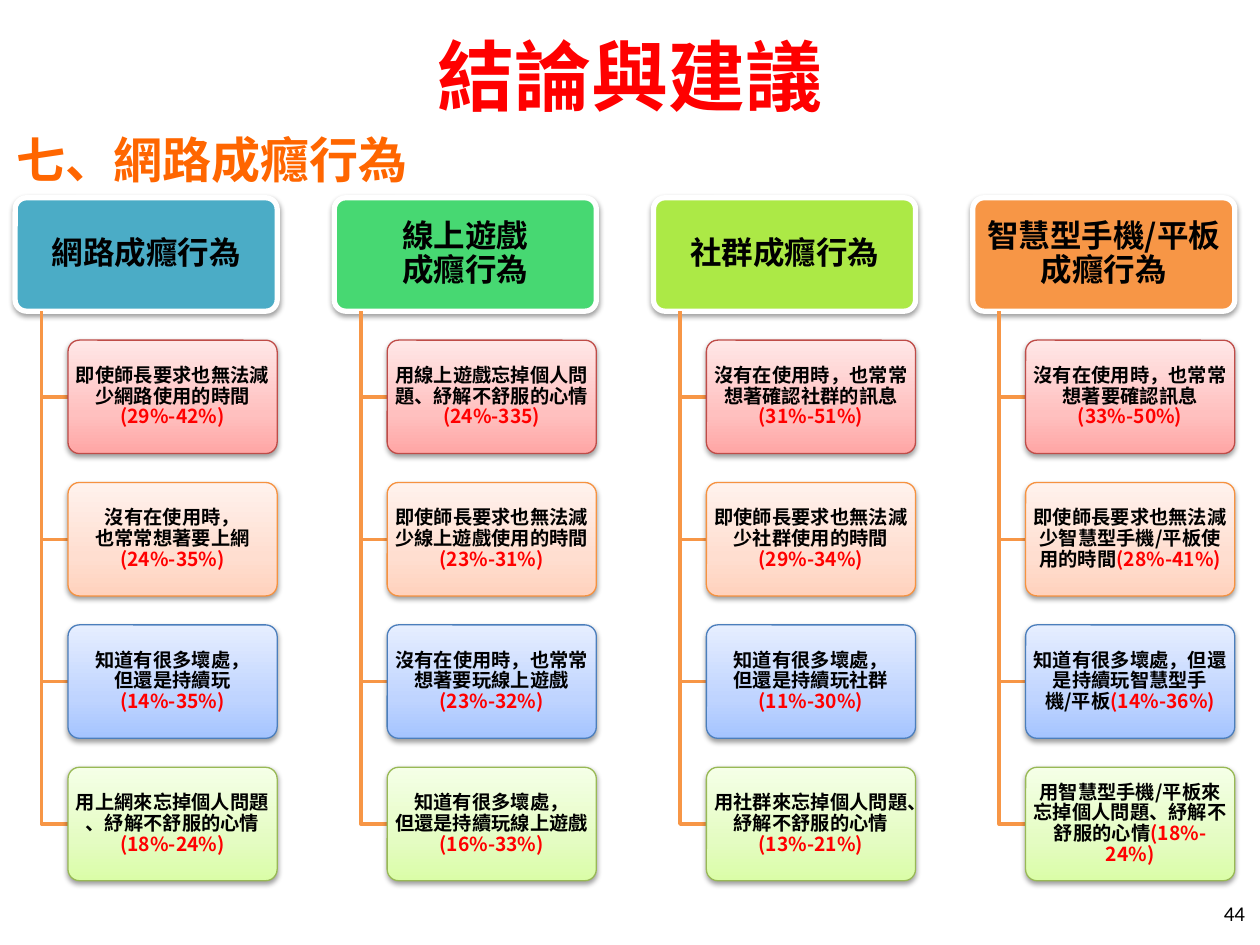
from copy import deepcopy

from lxml.etree import SubElement
from pptx import Presentation
from pptx.dml.color import RGBColor
from pptx.enum.shapes import MSO_SHAPE
from pptx.enum.text import MSO_ANCHOR, PP_ALIGN
from pptx.oxml.ns import qn
from pptx.util import Inches, Pt

FONT = "Noto Sans CJK SC"
COLORS = {
    "title": "FF0000", "section": "FF6600", "text": "000000",
    "share": "FF0000", "branch": "F79646", "header_line": "FFFFFF",
}
# Per row: outline, then gradient stops from bottom to top
ROW_STYLES = [
    ("BF4C48", ("FFA6A5", "FFC0BF", "FFE7E7")),
    ("F69240", ("FFD2BD", "FFDED0", "FFF2ED")),
    ("4B7EBC", ("A4C4FF", "BFD4FF", "E6EEFF")),
    ("98B955", ("DAFDA7", "E4FCC2", "F5FFE7")),
]
STOP_POSITIONS = (0, 35, 100)

# Per column: heading, fill, then (behaviour, share of students)
COLUMNS = [
    ("網路成癮行為", "4BACC6", [
        ("即使師長要求也無法減少網路使用的時間\n", "(29%-42%)"),
        ("沒有在使用時，\n也常常想著要上網\n", "(24%-35%)"),
        ("知道有很多壞處，\n但還是持續玩\n", "(14%-35%)"),
        ("用上網來忘掉個人問題\n、紓解不舒服的心情\n", "(18%-24%)"),
    ]),
    ("線上遊戲\n成癮行為", "47D872", [
        ("用線上遊戲忘掉個人問題、紓解不舒服的心情\n", "(24%-335)"),
        ("即使師長要求也無法減少線上遊戲使用的時間\n", "(23%-31%)"),
        ("沒有在使用時，也常常想著要玩線上遊戲\n", "(23%-32%)"),
        ("知道有很多壞處，\n但還是持續玩線上遊戲\n", "(16%-33%)"),
    ]),
    ("社群成癮行為", "ACE946", [
        ("沒有在使用時，也常常想著確認社群的訊息\n", "(31%-51%)"),
        ("即使師長要求也無法減少社群使用的時間\n", "(29%-34%)"),
        ("知道有很多壞處，\n但還是持續玩社群\n", "(11%-30%)"),
        ("用社群來忘掉個人問題、紓解不舒服的心情\n", "(13%-21%)"),
    ]),
    ("智慧型手機/平板成癮行為", "F79646", [
        ("沒有在使用時，也常常想著要確認訊息\n", "(33%-50%)"),
        ("即使師長要求也無法減少智慧型手機/平板使用的時間", "(28%-41%)"),
        ("知道有很多壞處，但還是持續玩智慧型手機/平板", "(14%-36%)"),
        ("用智慧型手機/平板來忘掉個人問題、紓解不舒服的心情", "(18%-24%)"),
    ]),
]

FIRST_LEFT, LAST_LEFT, HEADER_TOP = 0.12, 7.72, 1.57
COLUMN_STEP = (LAST_LEFT - FIRST_LEFT) / (len(COLUMNS) - 1)
ROW_STEP = 1.13
HEADER_WIDTH, BOX_WIDTH, BOX_HEIGHT = 2.08, 1.66, 0.9
TRUNK_INDENT, BOX_INDENT = 0.21, 0.42


def rgb(color):
    return RGBColor.from_string(color)


def format_run(run, size, color, bold=True, font=FONT):
    run.font.size = Pt(size)
    run.font.bold = bold
    run.font.color.rgb = rgb(color)
    run.font.name = font
    SubElement(run._r.get_or_add_rPr(), qn("a:ea"), typeface=font)


def match_line_breaks(paragraph):
    """Give line breaks the format of the first run, so line heights agree."""
    for line_break in paragraph._p.findall(qn("a:br")):
        line_break.insert(0, deepcopy(paragraph.runs[0]._r.rPr))


def add_text(slide, text, position, size, color, align=PP_ALIGN.LEFT,
             anchor=MSO_ANCHOR.TOP, bold=True, font=FONT):
    box = slide.shapes.add_textbox(*map(Inches, position))
    frame = box.text_frame
    frame.word_wrap = True
    frame.vertical_anchor = anchor
    frame.text = text
    paragraph = frame.paragraphs[0]
    paragraph.alignment = align
    format_run(paragraph.runs[0], size, color, bold, font)


def add_soft_shadow(shape):
    shape.shadow.inherit = False
    effects = shape._element.spPr.find(qn("a:effectLst"))
    shadow = SubElement(effects, qn("a:outerShdw"), blurRad=str(Pt(3.1)),
                        dist=str(Pt(1.6)), dir="5400000", rotWithShape="0")
    color = SubElement(shadow, qn("a:srgbClr"), val="000000")
    SubElement(color, qn("a:alpha"), val="38000")


def fill_gradient(shape, stops):
    shape.fill.gradient()
    shape.fill.gradient_angle = 90
    stop_list = shape._element.spPr.find(".//" + qn("a:gsLst"))
    stop_list.clear()
    for position, color in zip(STOP_POSITIONS, stops):
        stop = SubElement(stop_list, qn("a:gs"), pos=str(position * 1000))
        SubElement(stop, qn("a:srgbClr"), val=color)


def add_rounded_box(slide, left, top, width, line_color, line_width, margin):
    shape = slide.shapes.add_shape(
        MSO_SHAPE.ROUNDED_RECTANGLE, Inches(left), Inches(top),
        Inches(width), Inches(BOX_HEIGHT))
    shape.adjustments[0] = 0.1
    shape.line.color.rgb = rgb(line_color)
    shape.line.width = Pt(line_width)
    add_soft_shadow(shape)
    frame = shape.text_frame
    frame.word_wrap = True
    frame.vertical_anchor = MSO_ANCHOR.MIDDLE
    frame.margin_left = frame.margin_right = Inches(margin)
    frame.margin_top = frame.margin_bottom = Inches(0.02)
    return shape


def add_header(slide, left, heading, fill_color):
    shape = add_rounded_box(slide, left, HEADER_TOP, HEADER_WIDTH,
                            COLORS["header_line"], 3, 0.04)
    shape.fill.solid()
    shape.fill.fore_color.rgb = rgb(fill_color)
    shape.text_frame.text = heading
    for paragraph in shape.text_frame.paragraphs:
        paragraph.alignment = PP_ALIGN.CENTER
        paragraph.line_spacing = 0.9
        format_run(paragraph.runs[0], 18, COLORS["text"])


def add_branch(slide, trunk_left, box_left, middle):
    """Draw the elbow line from under the header to the side of a box."""
    header_bottom = HEADER_TOP + BOX_HEIGHT
    builder = slide.shapes.build_freeform(Inches(trunk_left), Inches(header_bottom))
    builder.add_line_segments(
        [(Inches(trunk_left), Inches(middle)), (Inches(box_left), Inches(middle))],
        close=False)
    branch = builder.convert_to_shape()
    branch.shadow.inherit = False
    branch.fill.background()
    branch.line.color.rgb = rgb(COLORS["branch"])
    branch.line.width = Pt(2)


def add_behaviour(slide, left, top, behaviour, share, style):
    line_color, stops = style
    shape = add_rounded_box(slide, left, top, BOX_WIDTH, line_color, 0.75, 0.02)
    fill_gradient(shape, stops)
    paragraph = shape.text_frame.paragraphs[0]
    paragraph.text = behaviour.rstrip("\n")
    paragraph.alignment = PP_ALIGN.CENTER
    paragraph.line_spacing = 0.9
    for run in paragraph.runs:
        format_run(run, 11, COLORS["text"])
    if behaviour.endswith("\n"):
        paragraph.add_line_break()
    share_run = paragraph.add_run()
    share_run.text = share
    format_run(share_run, 11, COLORS["share"])
    match_line_breaks(paragraph)


def add_column(slide, left, heading, fill_color, behaviours):
    add_header(slide, left, heading, fill_color)
    box_left = left + BOX_INDENT
    for row, (behaviour, share) in enumerate(behaviours):
        top = HEADER_TOP + (row + 1) * ROW_STEP
        add_branch(slide, left + TRUNK_INDENT, box_left, top + BOX_HEIGHT / 2)
        add_behaviour(slide, box_left, top, behaviour, share, ROW_STYLES[row])


def main():
    presentation = Presentation()
    presentation.slide_width = Inches(10)
    presentation.slide_height = Inches(7.5)
    slide = presentation.slides.add_slide(presentation.slide_layouts[6])
    add_text(slide, "結論與建議", (0.5, -0.03, 9, 1.25), 44, COLORS["title"],
             PP_ALIGN.CENTER, MSO_ANCHOR.MIDDLE)
    add_text(slide, "七、網路成癮行為", (0.03, 0.98, 9.97, 0.64), 28,
             COLORS["section"])
    for index, column in enumerate(COLUMNS):
        add_column(slide, FIRST_LEFT + index * COLUMN_STEP, *column)
    add_text(slide, "44", (7.65, 7.1, 2.33, 0.4), 12, COLORS["text"],
             PP_ALIGN.RIGHT, bold=False, font="Calibri")
    presentation.save("out.pptx")


if __name__ == "__main__":
    main()
